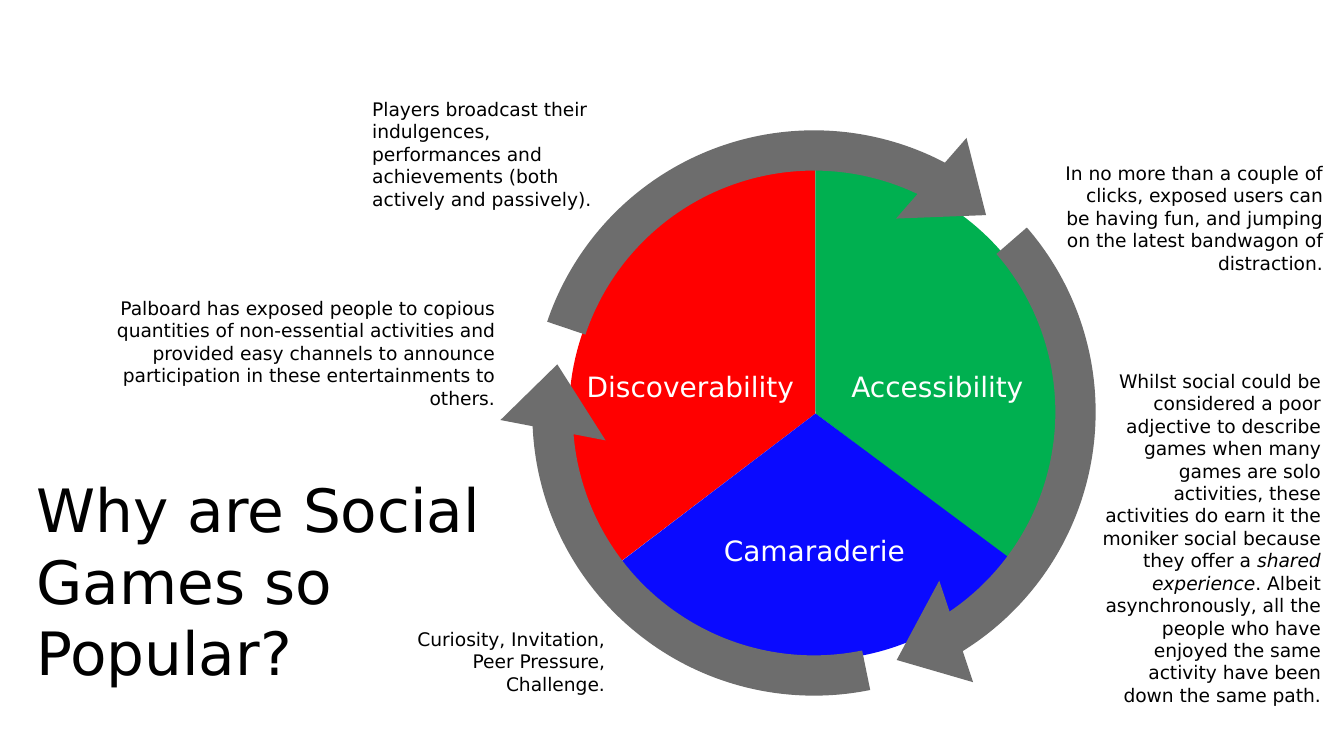
"""Build a slide on the cycle behind the popularity of social games."""
from pptx import Presentation
from pptx.dml.color import RGBColor
from pptx.enum.shapes import MSO_SHAPE as Preset
from pptx.enum.text import MSO_ANCHOR as Anchor, MSO_AUTO_SIZE as AutoSize, PP_ALIGN as Align
from pptx.util import Pt

EMU_PER_PX = 914400 / 134.4
FONT = "DejaVu Sans"
BLACK, WHITE, GREY = "000000", "FFFFFF", "6D6D6D"
PIE_BOX = (569, 167, 493, 493)
LABEL_SIZE = (247, 47)

SLICES = [
    ("Discoverability", "FF0000", 0, (85.65, 162), (567, 363)),
    ("Accessibility", "00B050", 127.2, (85.65, 162), (814, 363)),
    ("Camaraderie", "0A0AFF", 127.2, (161.69, 9.3), (691, 527)),
]
ARROW_ADJUSTMENTS = (0.064, 8.7, 178, 119.21, 0.085)
ARROWS = [(97, 0), (97, 120.4), (99, 239.8)]

TITLE = "Why are Social Games so Popular?"
NOTES = [
    ((97, 290, 411, 126), Align.RIGHT, [
        "Palboard has exposed people to copious quantities of non-essential activities "
        "and provided easy channels to announce participation in these entertainments to others."]),
    ((359, 91, 269, 126), Align.LEFT, [
        "Players broadcast their indulgences, performances and achievements "
        "(both actively and passively)."]),
    ((1044, 155, 292, 126), Align.RIGHT, [
        "In no more than a couple of clicks, exposed users can be having fun, "
        "and jumping on the latest bandwagon of distraction."]),
    ((1087, 363, 247, 353), Align.RIGHT, [
        "Whilst social could be considered a poor adjective to describe games when many "
        "games are solo activities, these activities do earn it the moniker social "
        "because they offer a ",
        "shared experience",
        ". Albeit asynchronously, all the people who have enjoyed the same activity "
        "have been down the same path."]),
    ((359, 621, 259, 82), Align.RIGHT, ["Curiosity, Invitation, Peer Pressure, Challenge."]),
]


def px(length):
    """Turn a length in px into EMU."""
    return round(length * EMU_PER_PX)


def color(value):
    """Turn a hex string into a colour."""
    return RGBColor.from_string(value)


def apply(target, values):
    """Set every attribute named in a dict of format values."""
    for name, value in values.items():
        setattr(target, name, value)


def add_preset(shapes, preset, box, fill, rotation, adjustments):
    """Add a filled preset shape without a line or shadow."""
    shape = shapes.add_shape(preset, *map(px, box))
    shape.rotation = rotation
    shape.shadow.inherit = False
    shape.fill.solid()
    shape.fill.fore_color.rgb = color(fill)
    shape.line.fill.background()
    for index, value in enumerate(adjustments):
        shape.adjustments[index] = value


def add_text(shapes, box, runs, size, ink=BLACK, align=Align.LEFT, fit=AutoSize.SHAPE_TO_FIT_TEXT):
    """Add a wrapped text box whose every second run is italic."""
    frame = shapes.add_textbox(*map(px, box)).text_frame
    apply(frame, {"word_wrap": True, "auto_size": fit, "vertical_anchor": Anchor.TOP})
    paragraph = frame.paragraphs[0]
    paragraph.alignment = align
    for index, text in enumerate(runs):
        run = paragraph.add_run()
        run.text = text
        apply(run.font, {"name": FONT, "size": Pt(size), "italic": index % 2 == 1})
        run.font.color.rgb = color(ink)


def add_slice(slide, label, fill, rotation, angles, label_corner):
    """Add a group of a pie slice and its label."""
    shapes = slide.shapes.add_group_shape().shapes
    add_preset(shapes, Preset.PIE, PIE_BOX, fill, rotation, angles)
    add_text(shapes, label_corner + LABEL_SIZE, [label], 15, WHITE, Align.CENTER)


def main():
    """Build and save the slide."""
    presentation = Presentation()
    apply(presentation, {"slide_width": px(1344), "slide_height": px(756)})
    slide = presentation.slides.add_slide(presentation.slide_layouts[6])
    for pie_slice in SLICES:
        add_slice(slide, *pie_slice)
    for top, rotation in ARROWS:
        add_preset(slide.shapes, Preset.CIRCULAR_ARROW, (499, top, 630, 630),
                   GREY, rotation, ARROW_ADJUSTMENTS)
    add_text(slide.shapes, (23, 466, 546, 262), [TITLE], 32, fit=AutoSize.NONE)
    for box, align, runs in NOTES:
        add_text(slide.shapes, box, runs, 10, align=align)
    presentation.save("out.pptx")


if __name__ == "__main__":
    main()
